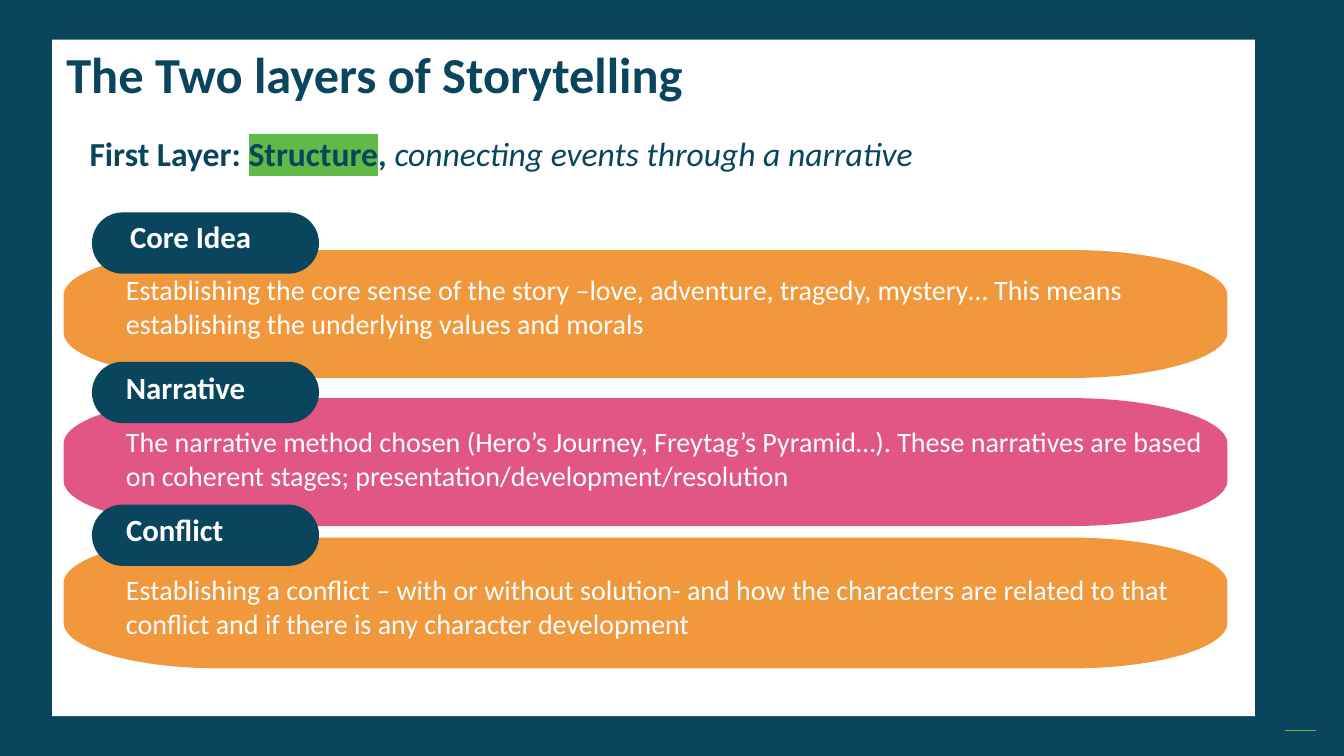
import lxml.etree
import pptx
import pptx.dml.color
import pptx.enum.shapes
import pptx.oxml.ns
import pptx.util

Pt = pptx.util.Pt
qn = pptx.oxml.ns.qn
SHAPES = pptx.enum.shapes.MSO_SHAPE
COLORS = {"navy": "09465E", "white": "FFFFFF", "green": "60BA47",
          "orange": "F1983D", "pink": "E25684"}


def rgb(name):
    return pptx.dml.color.RGBColor.from_string(COLORS[name])


class Deck:
    """Holds the style and the current slide; lengths are in points."""

    font = "Calibri"
    roundness = 0.55

    def __init__(self, s):
        self.s = s

    def paint(self, sp, color):
        sp.shadow.inherit = False
        sp.fill.solid()
        sp.fill.fore_color.rgb = rgb(color)
        sp.line.fill.background()
        return sp

    def shape(self, kind, x, y, w, h, color):
        sp = self.s.shapes.add_shape(kind, Pt(x), Pt(y), Pt(w), Pt(h))
        return self.paint(sp, color)

    def pill(self, x, y, w, h, color):
        self.shape(SHAPES.ROUNDED_RECTANGLE, x, y, w, h, color).adjustments[0] = 0.5

    def band(self, x, y, w, h, color, rx=111.6, ry=32.6):
        """A bar whose corners are quarter ellipses."""
        right, bottom = x + w, y + h
        outline = [(right - rx, bottom), (x + rx, bottom),
                   (x, bottom - ry), (x, y + ry),
                   (x + rx, y), (right - rx, y),
                   (right, y + ry), (right, bottom - ry),
                   (right - rx, bottom)]
        points = [(Pt(px), Pt(py)) for px, py in outline]
        builder = self.s.shapes.build_freeform(*points[0])
        builder.add_line_segments(points[1:], close=True)
        sp = self.paint(builder.convert_to_shape(), color)
        # Every second segment is a corner
        segments = list(sp._element.iter(qn("a:lnTo")))
        for i in range(1, len(segments), 2):
            self.curve(segments[i - 1], segments[i], i % 4 == 1)

    def curve(self, before, segment, from_horizontal):
        """Turn the straight segment into a quarter ellipse."""
        start, end = [(int(e[0].get("x")), int(e[0].get("y")))
                      for e in (before, segment)]
        corner = (end[0], start[1]) if from_horizontal else (start[0], end[1])
        bezier = lxml.etree.Element(qn("a:cubicBezTo"))
        controls = [[round(a + self.roundness * (c - a)) for a, c in zip(point, corner)]
                    for point in (start, end)]
        for px, py in controls + [end]:
            pt = lxml.etree.SubElement(bezier, qn("a:pt"))
            pt.set("x", str(px))
            pt.set("y", str(py))
        segment.getparent().replace(segment, bezier)

    def line(self, x1, y1, x2, y2, color, width=1):
        c = self.s.shapes.add_connector(
            pptx.enum.shapes.MSO_CONNECTOR.STRAIGHT, Pt(x1), Pt(y1), Pt(x2), Pt(y2))
        c.line.color.rgb = rgb(color)
        c.line.width = Pt(width)
        lxml.etree.SubElement(c._element.spPr, qn("a:effectLst"))

    def text(self, x, y, w, h, runs, size, color, spacing=None):
        """Each run is (text, bold, italic, highlight colour)."""
        tf = self.s.shapes.add_textbox(Pt(x), Pt(y), Pt(w), Pt(h)).text_frame
        tf.word_wrap = True
        p = tf.paragraphs[0]
        if spacing:
            p.line_spacing = spacing
        for words, bold, italic, highlight in runs:
            r = p.add_run()
            r.text = words
            r.font.size = Pt(size)
            r.font.bold = bold
            r.font.italic = italic
            r.font.color.rgb = rgb(color)
            r.font.name = self.font
            if highlight:
                self.highlight(r, highlight)

    def highlight(self, r, color):
        mark = lxml.etree.Element(qn("a:highlight"))
        lxml.etree.SubElement(mark, qn("a:srgbClr")).set("val", COLORS[color])
        r.font._element.find(qn("a:solidFill")).addnext(mark)


def main():
    prs = pptx.Presentation()
    prs.slide_width, prs.slide_height = Pt(960), Pt(540)
    deck = Deck(prs.slides.add_slide(prs.slide_layouts[6]))

    # Frame and page
    deck.shape(SHAPES.RECTANGLE, 0, 0, 960, 540, "navy")
    deck.shape(SHAPES.RECTANGLE, 37.2, 28.4, 859.2, 483.2, "white")
    deck.line(918, 522, 940.3, 522, "green")

    # Headings
    deck.text(40.3, 32.4, 791.3, 63.4,
              [("The Two layers of Storytelling", True, False, None)], 36, "navy", 0.9)
    deck.text(56.9, 95.4, 797.8, 34.6,
              [("First Layer: ", True, False, None),
               ("Structure", True, False, "green"),
               (", ", True, False, None),
               ("connecting events through a narrative", False, True, None)],
              24, "navy", Pt(24.8))

    # Layers: band top, height and colour, pill top, label place, text top, words
    layers = [
        (178.6, 91.4, "orange", 151.7, (85.8, 151.9), 191.2, "Core Idea",
         "Establishing the core sense of the story –love, adventure, tragedy, "
         "mystery… This means establishing the underlying values and morals"),
        (284.4, 91.4, "pink", 258.4, (82.9, 259.9), 299.9, "Narrative",
         "The narrative method chosen (Hero’s Journey, Freytag’s Pyramid…). "
         "These narratives are based on coherent stages; "
         "presentation/development/resolution"),
        (384, 93.4, "orange", 360.4, (83, 361.4), 405.4, "Conflict",
         "Establishing a conflict – with or without solution- and how the "
         "characters are related to that conflict and if there is any "
         "character development"),
    ]
    for top, height, color, pill_top, label_at, text_top, label, words in layers:
        deck.band(45.4, top, 831.4, height, color)
        deck.pill(65.7, pill_top, 162.2, 43.8, "navy")
        deck.text(*label_at, 162, 33.8, [(label, True, False, None)], 22, "white")
        deck.text(82.9, text_top, 794, 55.4, [(words, False, False, None)], 20, "white")

    prs.save("out.pptx")


if __name__ == "__main__":
    main()
